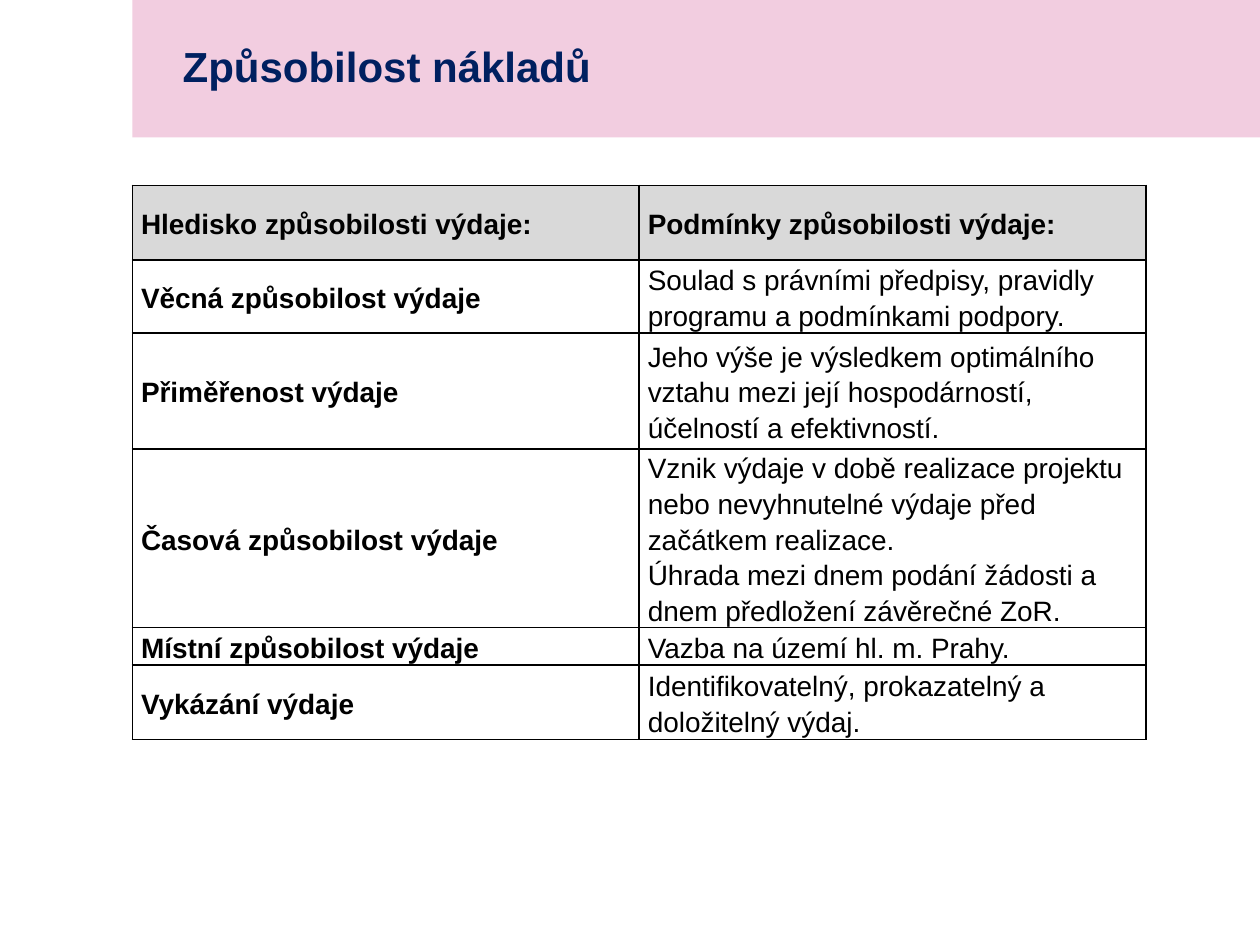
import pptx
import pptx.util
import pptx.dml.color
import pptx.enum.shapes
import pptx.enum.text
import pptx.oxml
import pptx.oxml.ns

Pt = pptx.util.Pt
RGB = pptx.dml.color.RGBColor.from_string
MIDDLE = pptx.enum.text.MSO_ANCHOR.MIDDLE

TITLE = "Způsobilost nákladů"
ROWS = [
    (42.5, "Hledisko způsobilosti výdaje:", ["Podmínky způsobilosti výdaje:"]),
    (41.8, "Věcná způsobilost výdaje",
     ["Soulad s právními předpisy, pravidly programu a podmínkami podpory."]),
    (66.2, "Přiměřenost výdaje",
     ["Jeho výše je výsledkem optimálního vztahu mezi její hospodárností, "
      "účelností a efektivností."]),
    (42.5, "Časová způsobilost výdaje",
     ["Vznik výdaje v době realizace projektu nebo nevyhnutelné výdaje před "
      "začátkem realizace.",
      "Úhrada mezi dnem podání žádosti a dnem předložení závěrečné ZoR."]),
    (21.4, "Místní způsobilost výdaje", ["Vazba na území hl. m. Prahy."]),
    (42.5, "Vykázání výdaje",
     ["Identifikovatelný, prokazatelný a doložitelný výdaj."]),
]
THEME = {
    "font": "Arial", "title_size": 24, "body_size": 16,
    "title": "002060", "text": "000000", "band": "F2CDE0",
    "header": "D9D9D9", "cell": "FFFFFF", "border": "000000",
}
SLIDE_W, SLIDE_H = 720, 540
LEFT, BAND_H = 75.6, 78.5
TABLE_TOP, COL_W = 106, 289.6


def set_attrs(obj, values):
    for name, value in values.items():
        setattr(obj, name, value)


def write(tf, lines, size, color, bold, spacing):
    tf.text = "\n".join(lines)
    for p in tf.paragraphs:
        set_attrs(p, {"line_spacing": spacing, "space_before": Pt(0),
                      "alignment": pptx.enum.text.PP_ALIGN.LEFT})
        for r in p.runs:
            set_attrs(r.font, {"name": THEME["font"], "size": Pt(size), "bold": bold})
            r.font.color.rgb = RGB(color)


def add_borders(cell):
    tc_pr = cell._tc.get_or_add_tcPr()
    for i, side in enumerate(("lnL", "lnR", "lnT", "lnB")):
        tc_pr.insert(i, pptx.oxml.parse_xml(
            f'<a:{side} {pptx.oxml.ns.nsdecls("a")} w="{Pt(1)}"><a:solidFill>'
            f'<a:srgbClr val="{THEME["border"]}"/></a:solidFill></a:{side}>'))


def add_band(s):
    sp = s.shapes.add_shape(pptx.enum.shapes.MSO_SHAPE.RECTANGLE,
                            Pt(LEFT), Pt(0), Pt(SLIDE_W - LEFT), Pt(BAND_H))
    sp.shadow.inherit = False
    sp.fill.solid()
    sp.fill.fore_color.rgb = RGB(THEME["band"])
    sp.line.fill.background()
    s.shapes.title._element.addprevious(sp._element)


def add_title(s):
    sp = s.shapes.title
    set_attrs(sp, {"left": Pt(97.2), "top": Pt(0), "width": Pt(601.2), "height": Pt(BAND_H)})
    set_attrs(sp.text_frame, {"vertical_anchor": MIDDLE, "word_wrap": True})
    write(sp.text_frame, [TITLE], THEME["title_size"], THEME["title"], True, 0.9)


def add_conditions(s):
    height = sum(row[0] for row in ROWS)
    table = s.shapes.add_table(len(ROWS), 2, Pt(LEFT), Pt(TABLE_TOP),
                               Pt(2 * COL_W), Pt(height)).table
    for col in table.columns:
        col.width = Pt(COL_W)
    for i, (row_h, aspect, conditions) in enumerate(ROWS):
        table.rows[i].height = Pt(row_h)
        for j, lines in enumerate(([aspect], conditions)):
            cell = table.cell(i, j)
            set_attrs(cell, {"vertical_anchor": MIDDLE, "margin_left": Pt(5),
                             "margin_right": Pt(5), "margin_top": 0, "margin_bottom": 0})
            cell.fill.solid()
            cell.fill.fore_color.rgb = RGB(THEME["cell" if i else "header"])
            add_borders(cell)
            write(cell.text_frame, lines, THEME["body_size"], THEME["text"],
                  i == 0 or j == 0, 1.15)


def main():
    prs = pptx.Presentation()
    set_attrs(prs, {"slide_width": Pt(SLIDE_W), "slide_height": Pt(SLIDE_H)})
    s = prs.slides.add_slide(prs.slide_layouts[5])
    add_band(s)
    add_title(s)
    add_conditions(s)
    prs.save("out.pptx")


if __name__ == "__main__":
    main()
